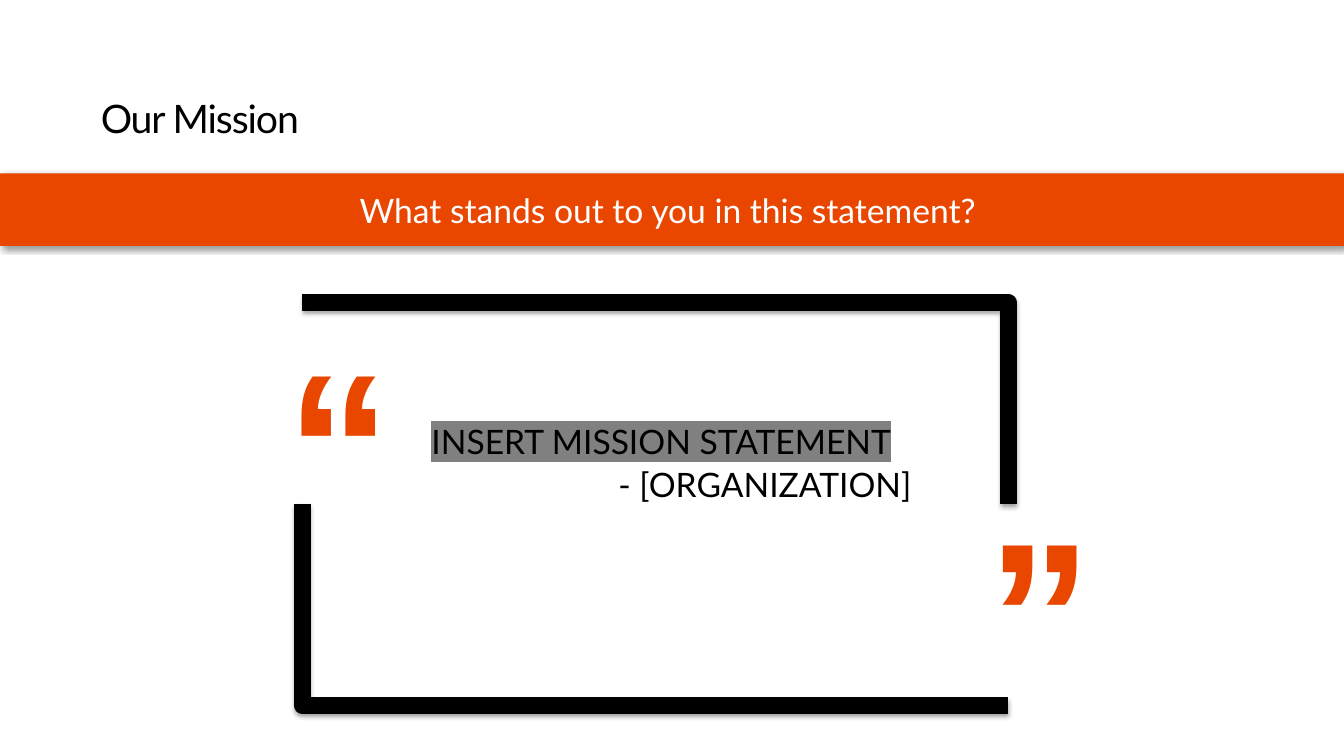
"""Builds the mission statement slide with its banner, broken frame and quote marks."""
from lxml.etree import SubElement
from pptx import Presentation
from pptx.dml.color import RGBColor
from pptx.enum.shapes import MSO_SHAPE as Shape
from pptx.enum.text import MSO_ANCHOR as Anchor, MSO_AUTO_SIZE as AutoSize, PP_ALIGN as Align
from pptx.oxml.ns import qn
from pptx.util import Inches, Pt

TITLE = "Our Mission"
QUESTION = "What stands out to you in this statement? "
STATEMENT = [
    ("INSERT MISSION STATEMENT", Align.LEFT, "808080"),
    ("- [ORGANIZATION]", Align.RIGHT, None),
]
QUOTES = [("“", 2.74, 3.04), ("”", 9.7, 4.72)]

WIDTH, HEIGHT = 13.33, 7.5
LEFT, TOP, RIGHT, BOTTOM = 3.35, 2.76, 9.71, 7.1
MIDDLE, STUB = (TOP + BOTTOM) / 2, 0.44
FRAME_HALVES = [
    [(LEFT, TOP + STUB), (LEFT, TOP), (RIGHT, TOP), (RIGHT, MIDDLE)],
    [(RIGHT, BOTTOM - STUB), (RIGHT, BOTTOM), (LEFT, BOTTOM), (LEFT, MIDDLE)],
]

BLACK = RGBColor(0x00, 0x00, 0x00)
WHITE = RGBColor(0xFF, 0xFF, 0xFF)
ORANGE = RGBColor(0xE9, 0x46, 0x00)


def write(para, text, size, color, font="Lato", bold=False, align=Align.LEFT):
    para.alignment = align
    span = para.add_run()
    span.text = text
    span.font.size, span.font.bold = Pt(size), bold
    span.font.color.rgb, span.font.name = color, font
    return span


def place(shape, left, top, width, height):
    shape.left, shape.top = Inches(left), Inches(top)
    shape.width, shape.height = Inches(width), Inches(height)


def set_margins(frame, left, top, right, bottom):
    frame.margin_left, frame.margin_top = Inches(left), Inches(top)
    frame.margin_right, frame.margin_bottom = Inches(right), Inches(bottom)


def add_text_box(slide, left, top, width, height):
    box = slide.shapes.add_textbox(*map(Inches, (left, top, width, height)))
    box.text_frame.word_wrap = True
    box.text_frame.auto_size = AutoSize.SHAPE_TO_FIT_TEXT
    return box.text_frame


def add_color(parent, value):
    return SubElement(parent, qn("a:srgbClr"), val=value)


def add_shadow(shape, opacity, blur, distance, angle):
    shape.shadow.inherit = False
    effects = shape._element.spPr.find(qn("a:effectLst"))
    shadow = SubElement(effects, qn("a:outerShdw"), blurRad=str(Pt(blur)),
                        dist=str(Pt(distance)), dir=str(angle * 60000),
                        algn="ctr", rotWithShape="0")
    SubElement(add_color(shadow, "000000"), qn("a:alpha"), val=str(opacity * 1000))


def add_title(slide):
    title = slide.shapes.title
    place(title, 1, 0.76, 11.33, 0.65)
    frame = title.text_frame
    frame.vertical_anchor = Anchor.BOTTOM
    set_margins(frame, 0, 0.05, 0, 0)
    para = frame.paragraphs[0]
    para.line_spacing = 0.9
    span = write(para, TITLE, 28, BLACK)
    span.font._element.set("spc", "-80")


def add_banner(slide):
    banner = slide.shapes.add_shape(
        Shape.RECTANGLE, 0, Inches(1.72), Inches(WIDTH), Inches(0.72))
    banner.fill.solid()
    banner.fill.fore_color.rgb = ORANGE
    banner.line.fill.background()
    add_shadow(banner, 40, 4, 3, 45)
    banner.text_frame.vertical_anchor = Anchor.MIDDLE
    write(banner.text_frame.paragraphs[0], QUESTION, 24, WHITE, align=Align.CENTER)


def add_statement(slide):
    frame = add_text_box(slide, 4.28, 4.17, 4.76, 0.84)
    frame.vertical_anchor = Anchor.MIDDLE
    set_margins(frame, 0, 0, 0, 0)
    for index, (text, align, highlight) in enumerate(STATEMENT):
        para = frame.add_paragraph() if index else frame.paragraphs[0]
        if index:
            para.space_before = Pt(2)
        span = write(para, text, 24, BLACK, align=align)
        if highlight:
            mark = SubElement(span.font._element, qn("a:highlight"))
            add_color(mark, highlight)
            span.font._element.find(qn("a:latin")).addprevious(mark)


def add_frame_half(slide, points):
    builder = slide.shapes.build_freeform(*points[0], scale=Inches(1))
    builder.add_line_segments(points[1:], close=False)
    half = builder.convert_to_shape()
    half.fill.background()
    half.line.color.rgb, half.line.width = BLACK, Pt(12)
    SubElement(half.line._get_or_add_ln(), qn("a:round"))
    add_shadow(half, 35, 3.1, 1.8, 90)


def main():
    deck = Presentation()
    deck.slide_width, deck.slide_height = Inches(WIDTH), Inches(HEIGHT)
    slide = deck.slides.add_slide(deck.slide_layouts[5])
    add_title(slide)
    add_banner(slide)
    add_statement(slide)
    for mark, left, top in QUOTES:
        frame = add_text_box(slide, left, top, 0.8, 2.63)
        write(frame.paragraphs[0], mark, 150, ORANGE, "Arial", bold=True)
    for points in FRAME_HALVES:
        add_frame_half(slide, points)
    deck.save("out.pptx")


if __name__ == "__main__":
    main()
